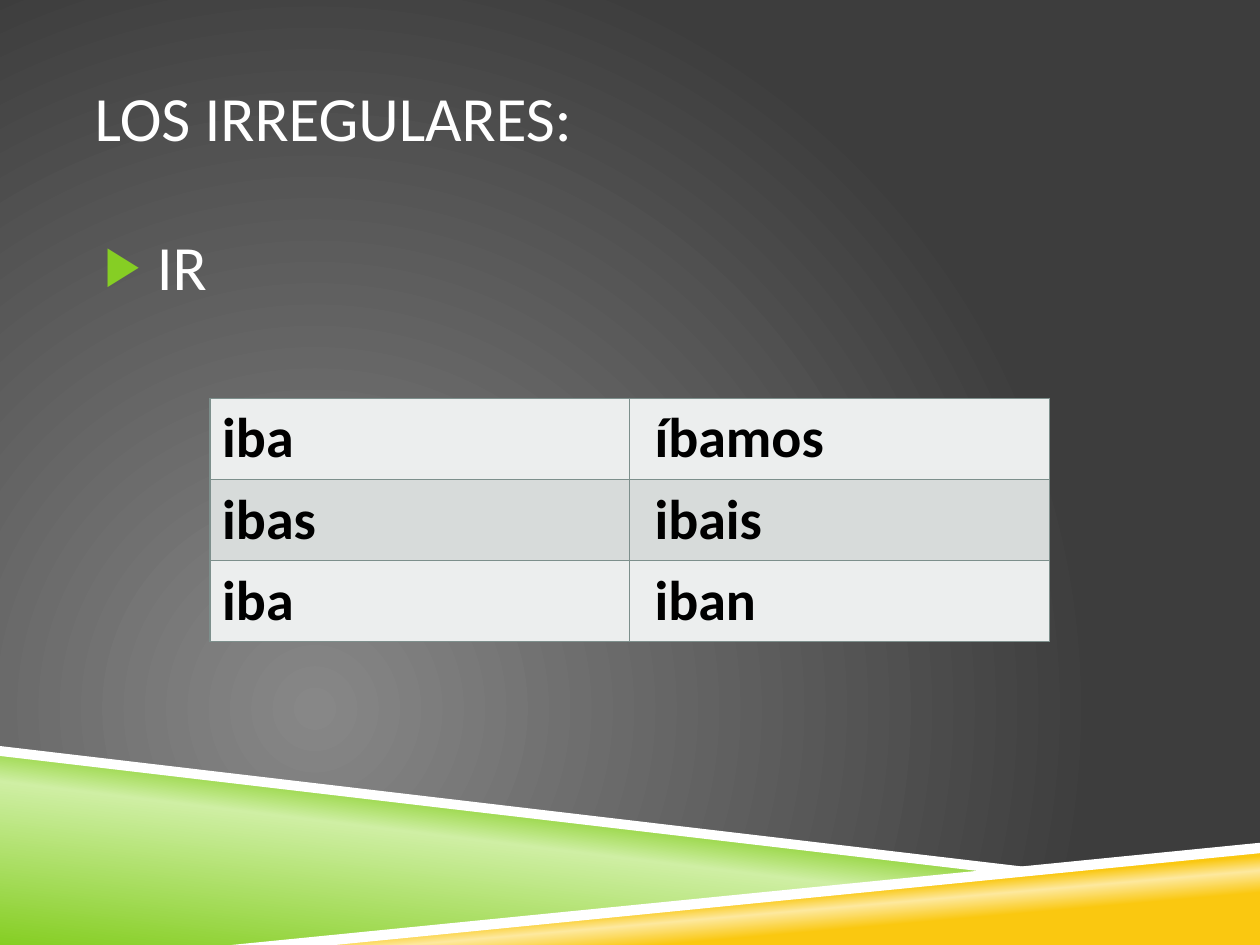
from lxml.etree import SubElement
from pptx import Presentation
from pptx.dml.color import RGBColor
from pptx.enum.text import MSO_ANCHOR, MSO_AUTO_SIZE, PP_ALIGN
from pptx.oxml.ns import qn
from pptx.util import Cm, Pt

FONT = "Calibri"
WHITE = RGBColor(0xFF, 0xFF, 0xFF)
BLACK = RGBColor(0x00, 0x00, 0x00)
GRAY = RGBColor(0x87, 0x87, 0x87)
DARK_GRAY = RGBColor(0x3D, 0x3D, 0x3D)
GREEN = RGBColor(0x86, 0xCE, 0x24)
LIGHT_GREEN = RGBColor(0xCF, 0xEF, 0xA4)
YELLOW = RGBColor(0xFA, 0xC8, 0x10)
LIGHT_YELLOW = RGBColor(0xFD, 0xE9, 0x9F)
BORDER = RGBColor(0x7D, 0x8F, 0x8C)
ROW_FILLS = [RGBColor(0xEC, 0xEE, 0xEE), RGBColor(0xD7, 0xDB, 0xDA)]


def add(parent, tag, **attributes):
    return SubElement(parent, qn(tag), {k: str(v) for k, v in attributes.items()})


def set_gradient(fill, holder, stops):
    """Give the fill these stops and return its element, ready for a direction."""
    fill.gradient()
    gradient = holder.find(".//" + qn("a:gradFill"))
    for child in list(gradient):
        gradient.remove(child)
    stop_list = add(gradient, "a:gsLst")
    for position, color in stops:
        stop = add(stop_list, "a:gs", pos=position * 1000)
        add(stop, "a:srgbClr", val=color)
    return gradient


presentation = Presentation()
presentation.slide_width = Cm(25.4)
presentation.slide_height = Cm(19.05)
slide = presentation.slides.add_slide(presentation.slide_layouts[1])

# Background with a glow at the lower left
gradient = set_gradient(slide.background.fill, slide.element,
                        [(0, GRAY), (100, DARK_GRAY)])
circle = add(gradient, "a:path", path="circle")
add(circle, "a:fillToRect", l=50000, t=100000, r=100000, b=50000)

# Bands along the bottom: points, gradient stops, gradient angle
bands = [
    ([(0, 15.16), (20.12, 17.58), (5.08, 19.05), (0, 19.05)],
     [(0, GREEN), (52, LIGHT_GREEN), (66, GREEN)], 277),
    ([(5.03, 19.05), (25.4, 17.07), (25.4, 19.05)],
     [(28, YELLOW), (40, LIGHT_YELLOW), (48, YELLOW)], 265),
    ([(0, 15.04), (0, 15.24), (20.07, 17.6), (21.13, 17.53)], None, None),
    ([(25.4, 16.99), (4.67, 19.05), (6.76, 19.05), (25.4, 17.2)], None, None),
]
for points, stops, angle in bands:
    corners = [(Cm(x), Cm(y)) for x, y in points]
    builder = slide.shapes.build_freeform(*corners[0])
    builder.add_line_segments(corners[1:], close=True)
    band = builder.convert_to_shape()
    band.shadow.inherit = False
    band.line.fill.background()
    if stops:
        gradient = set_gradient(band.fill, band.element, stops)
        add(gradient, "a:lin", ang=angle * 60000, scaled=0)
    else:
        band.fill.solid()
        band.fill.fore_color.rgb = WHITE

# Title and list, in front of the bands
title, body = slide.shapes.title, slide.placeholders[1]
for shape, text, top, height, anchor in [
    (title, "LOS IRREGULARES:", 0.76, 3.18, MSO_ANCHOR.MIDDLE),
    (body, "IR", 4.45, 10.36, MSO_ANCHOR.TOP),
]:
    shape.element.getparent().append(shape.element)
    shape.left, shape.top = Cm(1.91), Cm(top)
    shape.width, shape.height = Cm(21.59), Cm(height)
    frame = shape.text_frame
    frame.text = text
    frame.word_wrap = True
    frame.auto_size = MSO_AUTO_SIZE.NONE
    frame.vertical_anchor = anchor
    frame.margin_left = frame.margin_right = 0
    frame.margin_top = frame.margin_bottom = Cm(0.13)
    paragraph = frame.paragraphs[0]
    paragraph.alignment = PP_ALIGN.LEFT
    paragraph.space_before = Pt(0)
    if shape is body:
        properties = paragraph._p.get_or_add_pPr()
        properties.set("marL", str(Cm(1.25)))
        properties.set("indent", str(-Cm(1.05)))
        add(add(properties, "a:buClr"), "a:srgbClr", val=GREEN)
        add(properties, "a:buSzPct", val=85000)
        add(properties, "a:buChar", char="▶")
    paragraph.font.name = FONT
    paragraph.font.size = Pt(36)
    paragraph.font.color.rgb = WHITE

# Conjugation table
forms = [("iba", "íbamos"), ("ibas", "ibais"), ("iba", "iban")]
table = slide.shapes.add_table(len(forms), 2, Cm(4.23), Cm(8.03),
                               Cm(16.93), Cm(4.83)).table
table.first_row = table.horz_banding = False
for row, words in enumerate(forms):
    for column, word in enumerate(words):
        cell = table.cell(row, column)
        cell.text = word
        cell.margin_left = Cm(0.5 if column else 0.25)
        properties = cell._tc.get_or_add_tcPr()
        for side in ("a:lnL", "a:lnR", "a:lnT", "a:lnB"):
            line = add(properties, side, w=Pt(1))
            add(add(line, "a:solidFill"), "a:srgbClr", val=BORDER)
        cell.fill.solid()
        cell.fill.fore_color.rgb = ROW_FILLS[row % 2]
        font = cell.text_frame.paragraphs[0].font
        font.name = FONT
        font.size = Pt(32)
        font.bold = True
        font.color.rgb = BLACK

presentation.save("out.pptx")
